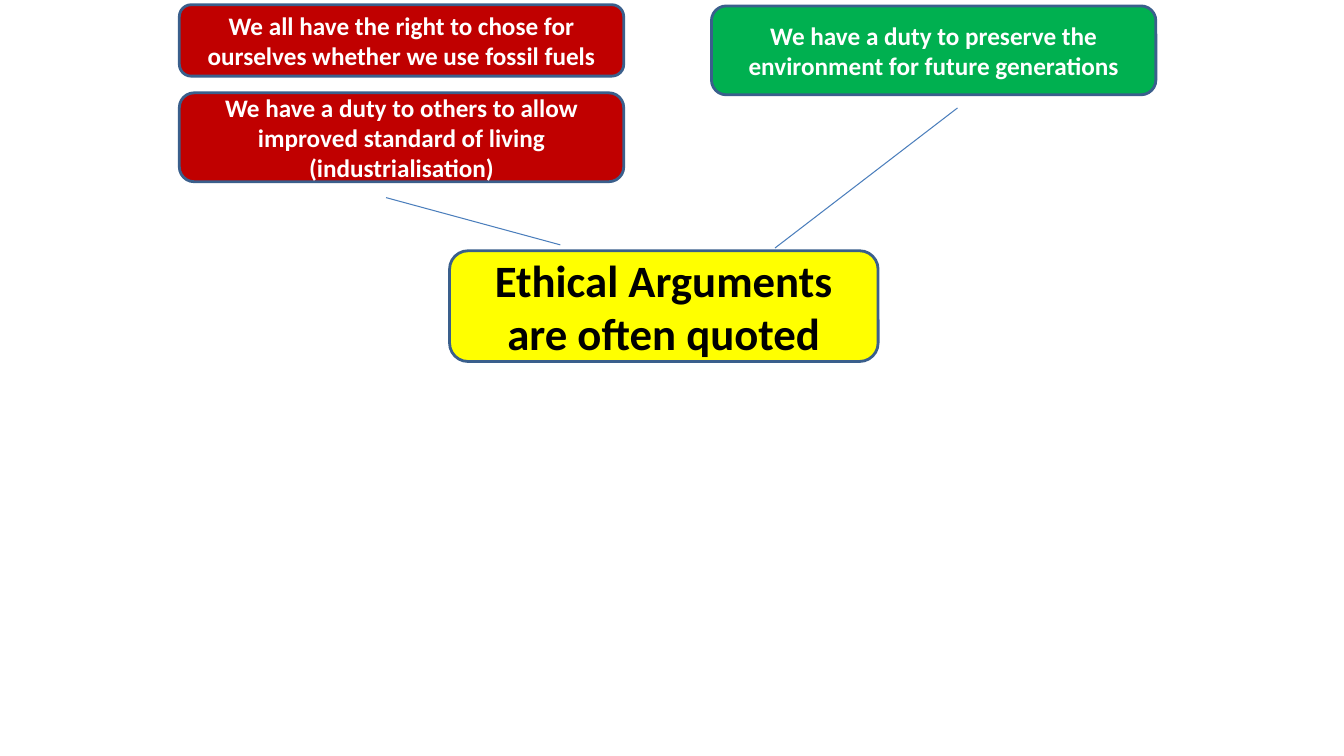
from lxml import etree
from pptx import Presentation
from pptx import util as u
from pptx.dml.color import RGBColor
from pptx.enum import shapes, text
from pptx.oxml import ns

YELLOW = RGBColor(0xFF, 0xFF, 0x00)
RED = RGBColor(0xC0, 0x00, 0x00)
GREEN = RGBColor(0x00, 0xB0, 0x50)
OUTLINE = RGBColor(0x3A, 0x5F, 0x8C)
LINK = RGBColor(0x4B, 0x7E, 0xBC)
BLACK = RGBColor(0x00, 0x00, 0x00)
WHITE = RGBColor(0xFF, 0xFF, 0xFF)

ARGUMENT_WIDTH = 11.2


def add_box(s, box, wording, fill, color=WHITE, size=18):
    sp = s.shapes.add_shape(shapes.MSO_SHAPE.ROUNDED_RECTANGLE, *map(u.Cm, box))
    sp.shadow.inherit = False
    sp.fill.solid()
    sp.fill.fore_color.rgb = fill
    sp.line.color.rgb = OUTLINE
    sp.line.width = u.Pt(2)
    tf = sp.text_frame
    tf.word_wrap = True
    tf.vertical_anchor = text.MSO_ANCHOR.MIDDLE
    p = tf.paragraphs[0]
    p.text = wording
    p.alignment = text.PP_ALIGN.CENTER
    p.font.name = "Calibri"
    p.font.size = u.Pt(size)
    p.font.bold = True
    p.font.color.rgb = color


def add_link(s, start, end):
    line = s.shapes.add_connector(
        shapes.MSO_CONNECTOR.STRAIGHT, *map(u.Cm, start + end))
    line.line.color.rgb = LINK
    line.line.width = u.Pt(0.75)
    etree.SubElement(line._element.spPr, ns.qn("a:effectLst"))


def add_arguments(s, left, top, arguments, fill):
    for offset, height, wording in arguments:
        add_box(s, (left, top + offset, ARGUMENT_WIDTH, height), wording, fill)


def add_mind_map(s):
    add_box(s, (11.33, 6.32, 10.8, 2.79), "Ethical Arguments are often quoted",
            YELLOW, BLACK, 32)
    add_link(s, (9.73, 4.98), (14.12, 6.17))
    add_link(s, (24.13, 2.72), (19.53, 6.25))
    add_arguments(s, 4.52, 0.12, [
        (0, 1.8, "We all have the right to chose for ourselves "
                 "whether we use fossil fuels"),
        (2.22, 2.24, "We have a duty to others to allow improved "
                     "standard of living (industrialisation)"),
    ], RED)
    add_arguments(s, 17.93, 0.15, [
        (0, 2.24, "We have a duty to preserve the environment "
                  "for future generations"),
    ], GREEN)


def main():
    prs = Presentation()
    prs.slide_width = u.Cm(33.87)
    prs.slide_height = u.Cm(19.05)
    s = prs.slides.add_slide(prs.slide_layouts.get_by_name("Blank"))
    add_mind_map(s)
    prs.save("out.pptx")


if __name__ == "__main__":
    main()
